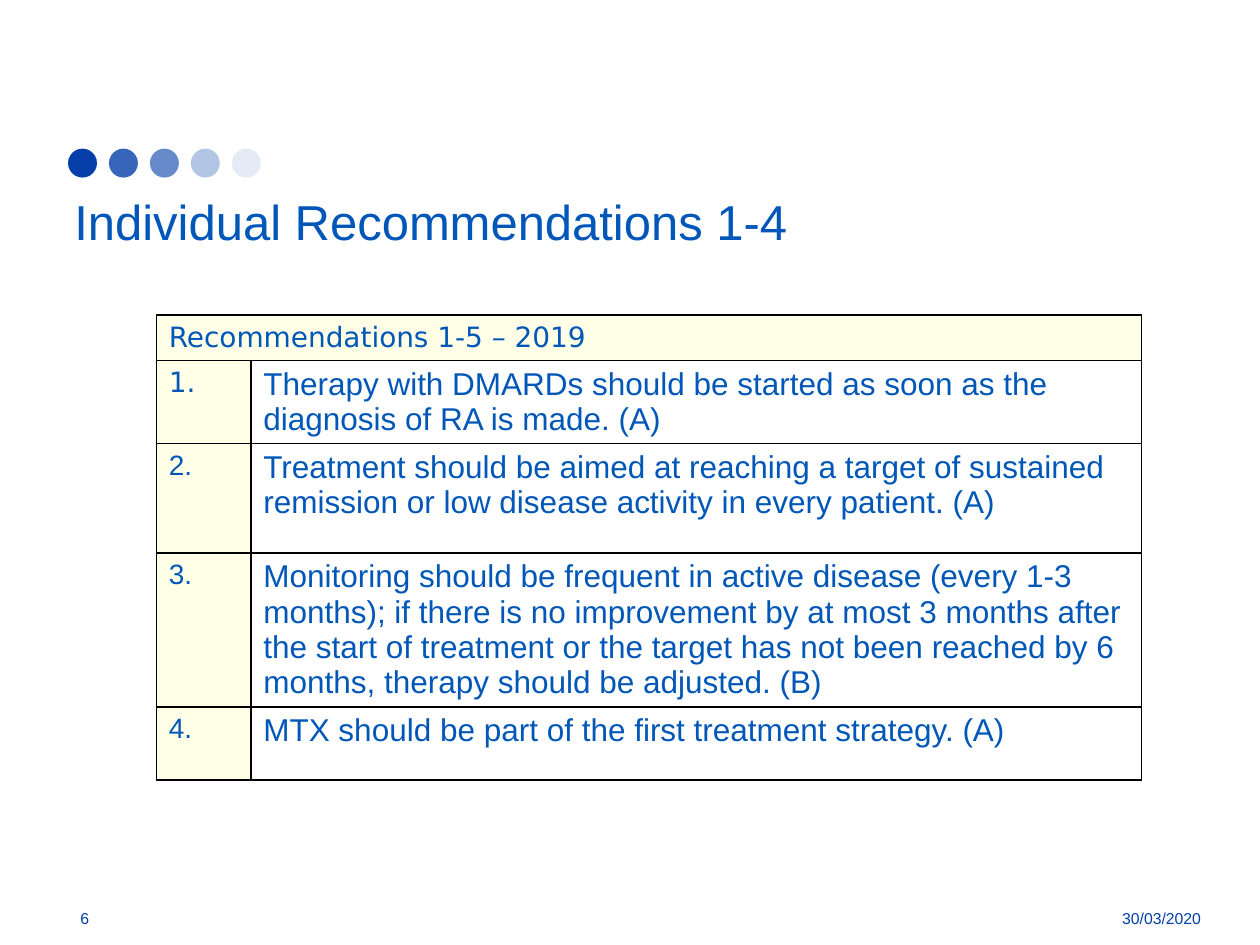
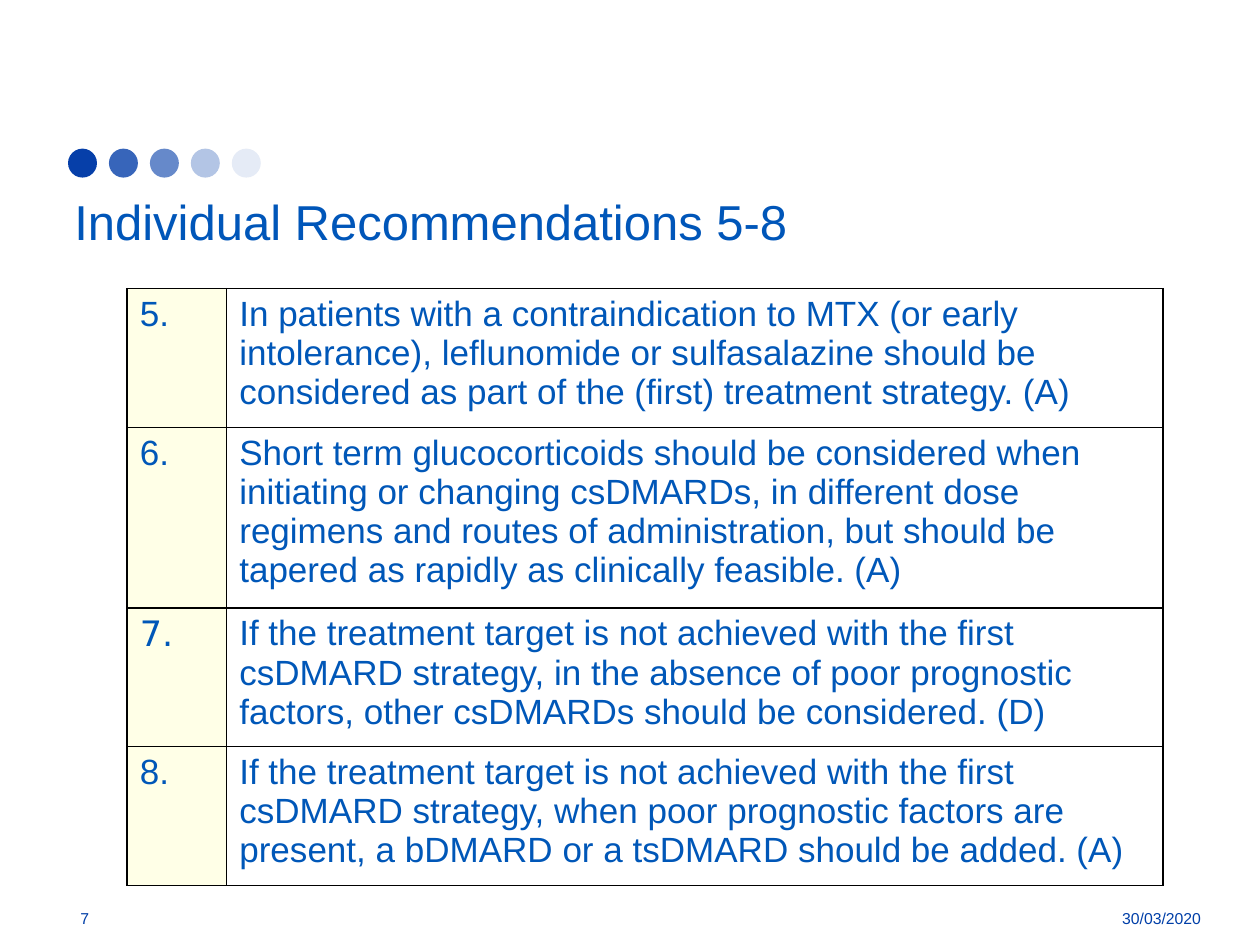
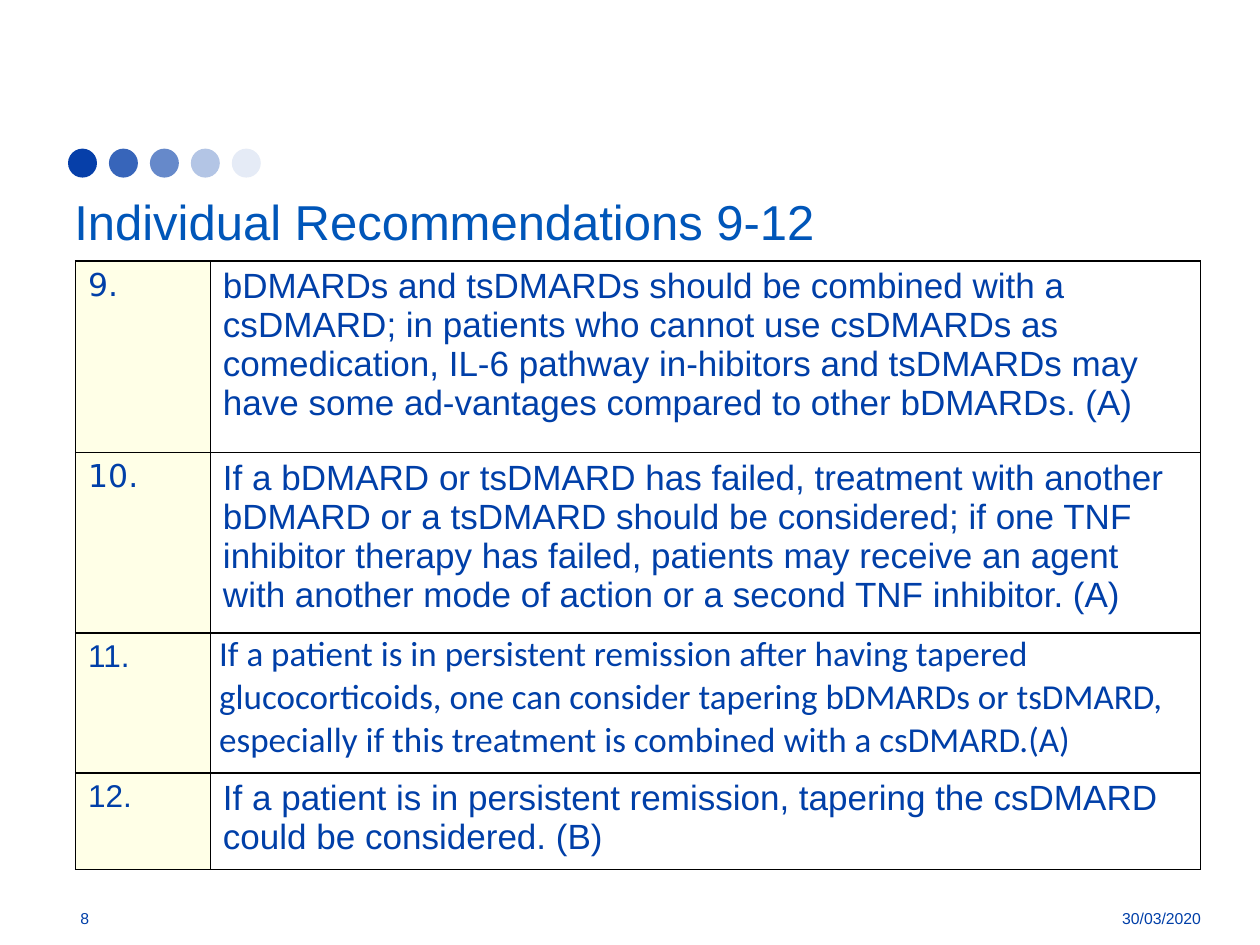
from lxml.etree import SubElement
from pptx import Presentation
from pptx.dml.color import RGBColor
from pptx.enum.shapes import MSO_SHAPE as Shape
from pptx.enum.text import MSO_ANCHOR as Anchor, PP_ALIGN as Align
from pptx.oxml.ns import qn
from pptx.util import Inches, Pt

COLOURS = {
    "dot": "063FA9",
    "title": "0056B9",
    "footer": "003FA8",
    "blue": "0057B8",
    "navy": "003FA8",
    "cream": "FFFFE7",
    "white": "FFFFFF",
    "border": "000000",
}
DOT_OPACITIES = [100, 80, 61, 30, 10]
DATE = "30/03/2020"
FIRST_PAGE = 6

TITLE_FONT = {"name": "Arial", "size": Pt(28)}
FOOTER_FONT = {"name": "Arial", "size": Pt(9)}
ARIAL_16 = {"name": "Arial", "size": Pt(16)}
ARIAL_18 = {"name": "Arial", "size": Pt(18)}
ARIAL_20 = {"name": "Arial", "size": Pt(20)}
DEJAVU_16 = {"name": "DejaVu Sans", "size": Pt(16)}
DEJAVU_18 = {"name": "DejaVu Sans", "size": Pt(18)}
DEJAVU_20 = {"name": "DejaVu Sans", "size": Pt(20)}
CALIBRI_20 = {"name": "Calibri", "size": Pt(20)}

TITLE_FRAME = {
    "word_wrap": True,
    "vertical_anchor": Anchor.TOP,
    "margin_left": Inches(0.08),
    "margin_top": Inches(0.1),
}
FOOTER_FRAME = {"word_wrap": True, "vertical_anchor": Anchor.MIDDLE}
TIGHT_MARGINS = {
    "margin_left": Inches(0.07),
    "margin_right": Inches(0.07),
    "margin_top": 0,
    "margin_bottom": 0,
}

# Each row: height, number, number font, recommendation, recommendation font.
SLIDES = [
    {
        "title": "Individual Recommendations 1-4",
        "position": (1.24, 2.5),
        "columns": (0.75, 7.07),
        "colour": "blue",
        "header": (0.36, "Recommendations 1-5 – 2019", DEJAVU_16),
        "rows": [
            (0.66, "1.", DEJAVU_16,
             "Therapy with DMARDs should be started as soon as the diagnosis "
             "of RA is made. (A)", ARIAL_18),
            (0.87, "2.", ARIAL_16,
             "Treatment should be aimed at reaching a target of sustained "
             "remission or low disease activity in every patient. (A)", ARIAL_18),
            (1.22, "3.", ARIAL_16,
             "Monitoring should be frequent in active disease (every 1-3 months); "
             "if there is no improvement by at most 3 months after the start of "
             "treatment or the target has not been reached by 6 months, therapy "
             "should be adjusted. (B)", ARIAL_18),
            (0.58, "4.", ARIAL_16,
             "MTX should be part of the first treatment strategy. (A)", ARIAL_18),
        ],
    },
    {
        "title": "Individual Recommendations 5-8",
        "position": (1.01, 2.29),
        "columns": (0.79, 7.43),
        "colour": "blue",
        "rows": [
            (1.03, "5.", ARIAL_20,
             "In patients with a contraindication to MTX (or early intolerance), "
             "leflunomide or sulfasalazine should be considered as part of the "
             "(first) treatment strategy. (A)", ARIAL_20),
            (1.34, "6.", ARIAL_20,
             "Short term glucocorticoids should be considered when initiating or "
             "changing csDMARDs, in different dose regimens and routes of "
             "administration, but should be tapered as rapidly as clinically "
             "feasible. (A)", ARIAL_20),
            (1.03, "7.", DEJAVU_20,
             "If the treatment target is not achieved with the first csDMARD "
             "strategy, in the absence of poor prognostic factors, other csDMARDs "
             "should be considered. (D)", ARIAL_20),
            (1.03, "8.", ARIAL_20,
             "If the treatment target is not achieved with the first csDMARD "
             "strategy, when poor prognostic factors are present, a bDMARD or a "
             "tsDMARD should be added. (A)", ARIAL_20),
        ],
    },
    {
        "title": "Individual Recommendations 9-12",
        "position": (0.6, 2.07),
        "columns": (1.07, 7.86),
        "colour": "navy",
        "rows": [
            (1.52, "9.", DEJAVU_18,
             "bDMARDs and tsDMARDs should be combined with a csDMARD; in patients "
             "who cannot use csDMARDs as comedication, IL-6 pathway in-hibitors and "
             "tsDMARDs may have some ad-vantages compared to other bDMARDs. (A)",
             ARIAL_20),
            (1.34, "10.", DEJAVU_18,
             "If a bDMARD or tsDMARD has failed, treatment with another bDMARD or a "
             "tsDMARD should be considered; if one TNF inhibitor therapy has failed, "
             "patients may receive an agent with another mode of action or a second "
             "TNF inhibitor. (A)", ARIAL_20),
            (1.11, "11.", ARIAL_18,
             "If a patient is in persistent remission after having tapered "
             "glucocorticoids, one can consider tapering bDMARDs or tsDMARD, "
             "especially if this treatment is combined with a csDMARD.(A)",
             CALIBRI_20),
            (0.71, "12.", ARIAL_18,
             "If a patient is in persistent remission, tapering the csDMARD could "
             "be considered. (B)", ARIAL_20),
        ],
    },
]


def rgb(name):
    return RGBColor.from_string(COLOURS[name])


def set_attributes(target, values):
    for name, value in values.items():
        setattr(target, name, value)


def write_text(text_frame, text, font, colour, align=Align.LEFT):
    paragraph = text_frame.paragraphs[0]
    paragraph.alignment = align
    run = paragraph.add_run()
    run.text = text
    set_attributes(run.font, font)
    run.font.color.rgb = rgb(colour)


def add_text(slide, box, text, font, colour, frame, align=Align.LEFT):
    text_frame = slide.shapes.add_textbox(*map(Inches, box)).text_frame
    set_attributes(text_frame, frame)
    write_text(text_frame, text, font, colour, align)


def add_dots(slide):
    """Draw the row of circles that fades out to the right."""
    group = slide.shapes.add_group_shape()
    for index, opacity in enumerate(DOT_OPACITIES):
        left = Inches(0.54 + 0.325 * index)
        dot = group.shapes.add_shape(
            Shape.OVAL, left, Inches(1.18), Inches(0.23), Inches(0.23))
        dot.shadow.inherit = False
        dot.line.fill.background()
        dot.fill.solid()
        dot.fill.fore_color.rgb = rgb("dot")
        if opacity < 100:
            colour = dot._element.spPr.find(".//" + qn("a:srgbClr"))
            SubElement(colour, qn("a:alpha"), val=str(opacity * 1000))


def add_borders(cell):
    properties = cell._tc.get_or_add_tcPr()
    for side in ("lnL", "lnR", "lnT", "lnB"):
        line = SubElement(properties, qn("a:" + side), w=str(Pt(1)))
        fill = SubElement(line, qn("a:solidFill"))
        SubElement(fill, qn("a:srgbClr"), val=COLOURS["border"])


def format_cell(cell, fill):
    add_borders(cell)
    cell.fill.solid()
    cell.fill.fore_color.rgb = rgb(fill)


def add_recommendations(slide, content):
    """Add the numbered table, with a merged header row if there is one."""
    rows, header = content["rows"], content.get("header")
    colour = content["colour"]
    heights = [row[0] for row in rows]
    if header:
        heights.insert(0, header[0])
    box = (*content["position"], sum(content["columns"]), sum(heights))
    table = slide.shapes.add_table(len(heights), 2, *map(Inches, box)).table
    set_attributes(table, {"first_row": False, "horz_banding": False})
    for column, width in zip(table.columns, content["columns"]):
        column.width = Inches(width)
    for row, height in zip(table.rows, heights):
        row.height = Inches(height)
        for cell, fill in zip(row.cells, ("cream", "white")):
            format_cell(cell, fill)

    if header:
        table.cell(0, 0).merge(table.cell(0, 1))
        write_text(table.cell(0, 0).text_frame, *header[1:], colour)
    first_row = 1 if header else 0
    for index, row in enumerate(rows, first_row):
        _, number, number_font, text, text_font = row
        number_cell, text_cell = table.rows[index].cells
        write_text(number_cell.text_frame, number, number_font, colour)
        write_text(text_cell.text_frame, text, text_font, colour)
        if text_font is CALIBRI_20:
            set_attributes(text_cell, TIGHT_MARGINS)


def add_footer(slide, page):
    add_text(slide, (0.54, 7.09, 0.96, 0.4), str(page), FOOTER_FONT,
             "footer", FOOTER_FRAME)
    add_text(slide, (8.29, 7.09, 1.34, 0.4), DATE, FOOTER_FONT,
             "footer", FOOTER_FRAME, Align.RIGHT)


def main():
    presentation = Presentation()
    presentation.slide_width = Inches(10)
    presentation.slide_height = Inches(7.5)
    for page, content in enumerate(SLIDES, FIRST_PAGE):
        slide = presentation.slides.add_slide(presentation.slide_layouts[6])
        add_dots(slide)
        add_recommendations(slide, content)
        add_text(slide, (0.51, 1.42, 9.11, 0.69), content["title"], TITLE_FONT,
                 "title", TITLE_FRAME)
        add_footer(slide, page)
    presentation.save("out.pptx")


if __name__ == "__main__":
    main()
